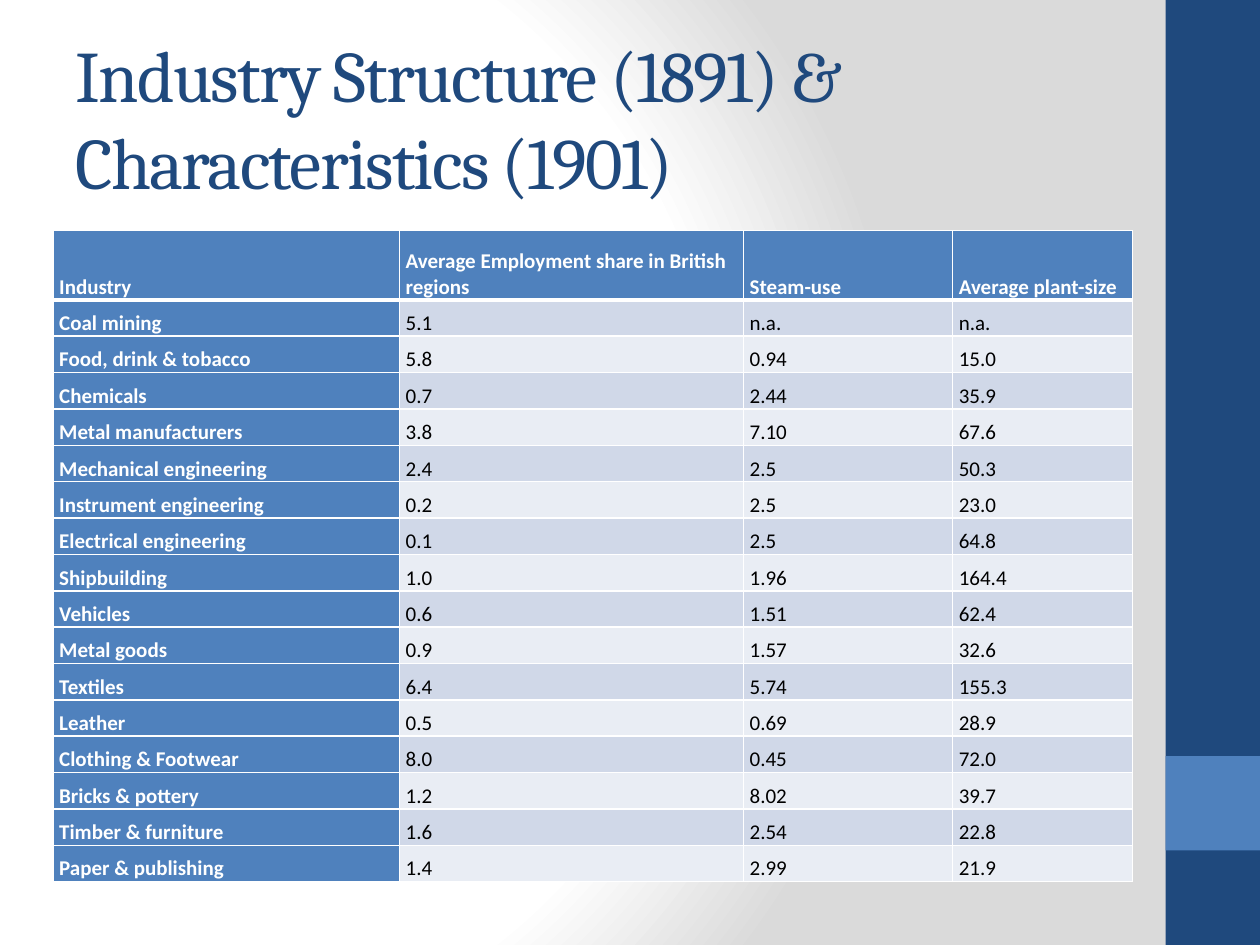
"""Build a slide with a table of industry structure and characteristics."""
from pptx import Presentation
from pptx.dml.color import RGBColor
from pptx.enum.shapes import MSO_SHAPE
from pptx.enum.text import MSO_ANCHOR
from pptx.oxml import parse_xml
from pptx.oxml.ns import nsdecls
from pptx.util import Inches, Pt

COLORS = {
    "navy": "1F497D", "blue": "4F81BD", "white": "FFFFFF", "grey": "DADADA",
    "black": "000000", "dark_band": "D0D8E8", "light_band": "E9EDF4",
}
INDUSTRIES = [
    ("Industry", "Average Employment share in British regions", "Steam-use", "Average plant-size"),
    ("Coal mining", "5.1", "n.a.", "n.a."),
    ("Food, drink & tobacco", "5.8", "0.94", "15.0"),
    ("Chemicals", "0.7", "2.44", "35.9"),
    ("Metal manufacturers", "3.8", "7.10", "67.6"),
    ("Mechanical engineering", "2.4", "2.5", "50.3"),
    ("Instrument engineering", "0.2", "2.5", "23.0"),
    ("Electrical engineering", "0.1", "2.5", "64.8"),
    ("Shipbuilding", "1.0", "1.96", "164.4"),
    ("Vehicles", "0.6", "1.51", "62.4"),
    ("Metal goods", "0.9", "1.57", "32.6"),
    ("Textiles", "6.4", "5.74", "155.3"),
    ("Leather", "0.5", "0.69", "28.9"),
    ("Clothing & Footwear", "8.0", "0.45", "72.0"),
    ("Bricks & pottery", "1.2", "8.02", "39.7"),
    ("Timber & furniture", "1.6", "2.54", "22.8"),
    ("Paper & publishing", "1.4", "2.99", "21.9"),
]
COLUMN_WIDTHS = [2.75, 2.73, 1.66, 1.43]
HEADER_HEIGHT, TABLE_HEIGHT = 0.55, 5.17


def write(frame, text, color, **font_format):
    run = frame.paragraphs[0].add_run()
    run.text = text
    run.font.color.rgb = RGBColor.from_string(COLORS[color])
    for attribute, value in font_format.items():
        setattr(run.font, attribute, value)
    return run


def border(side, points):
    return parse_xml(
        f'<a:{side} {nsdecls("a")} w="{Pt(points)}"><a:solidFill>'
        f'<a:srgbClr val="{COLORS["white"]}"/></a:solidFill></a:{side}>'
    )


deck = Presentation()
deck.slide_width, deck.slide_height = Inches(10), Inches(7.5)
slide = deck.slides.add_slide(deck.slide_layouts[6])

slide.background.fill.solid()
backdrop = slide.element.xpath("./p:cSld/p:bg/p:bgPr")[0]
stops = "".join(
    f'<a:gs pos="{share * 1000}"><a:srgbClr val="{COLORS[color]}"/></a:gs>'
    for share, color in [(0, "white"), (75, "white"), (100, "grey")]
)
backdrop.replace(backdrop[0], parse_xml(
    f'<a:gradFill {nsdecls("a")} rotWithShape="1"><a:gsLst>{stops}</a:gsLst><a:path path="circle">'
    '<a:fillToRect l="20000" t="50000" r="100000" b="50000"/></a:path></a:gradFill>'
))

for top, height, color in [(0, 7.5, "navy"), (6, 0.75, "blue")]:
    band = slide.shapes.add_shape(
        MSO_SHAPE.RECTANGLE, Inches(9.25), Inches(top), Inches(0.75), Inches(height))
    band.shadow.inherit = False
    band.fill.solid()
    band.fill.fore_color.rgb = RGBColor.from_string(COLORS[color])
    band.line.fill.background()

title = slide.shapes.add_textbox(Inches(0.5), Inches(0.3), Inches(8.33), Inches(1.25)).text_frame
title.word_wrap = True
title.vertical_anchor = MSO_ANCHOR.MIDDLE
heading = write(title, "Industry Structure (1891) & Characteristics (1901)", "navy",
                name="Cambria", size=Pt(41.4))
heading.font.fill.solid()
heading.font.color.rgb = RGBColor.from_string(COLORS["navy"])
heading.font._element.set("spc", "-100")

table = slide.shapes.add_table(
    len(INDUSTRIES), len(COLUMN_WIDTHS), Inches(0.42), Inches(1.83),
    Inches(sum(COLUMN_WIDTHS)), Inches(TABLE_HEIGHT)).table
for column, width in zip(table.columns, COLUMN_WIDTHS):
    column.width = Inches(width)

cell_format = {
    "vertical_anchor": MSO_ANCHOR.BOTTOM, "margin_left": Inches(0.05),
    "margin_right": Inches(0.05), "margin_top": 0, "margin_bottom": 0,
}
row_height = (TABLE_HEIGHT - HEADER_HEIGHT) / (len(INDUSTRIES) - 1)
for r, industry in enumerate(INDUSTRIES):
    table.rows[r].height = Inches(row_height if r else HEADER_HEIGHT)
    for c, text in enumerate(industry):
        cell = table.cell(r, c)
        for attribute, value in cell_format.items():
            setattr(cell, attribute, value)
        is_label = r == 0 or c == 0
        fill = "blue" if is_label else "dark_band" if r % 2 else "light_band"
        cell.fill.solid()
        cell.fill.fore_color.rgb = RGBColor.from_string(COLORS[fill])
        write(cell.text_frame, text, "white" if is_label else "black",
              name="Calibri", size=Pt(12), bold=is_label)
        widths = {"lnL": 1, "lnR": 1, "lnT": 3 if r == 1 else 1, "lnB": 1 if r else 3}
        for place, (side, points) in enumerate(widths.items()):
            cell._tc.tcPr.insert(place, border(side, points))

deck.save("out.pptx")
